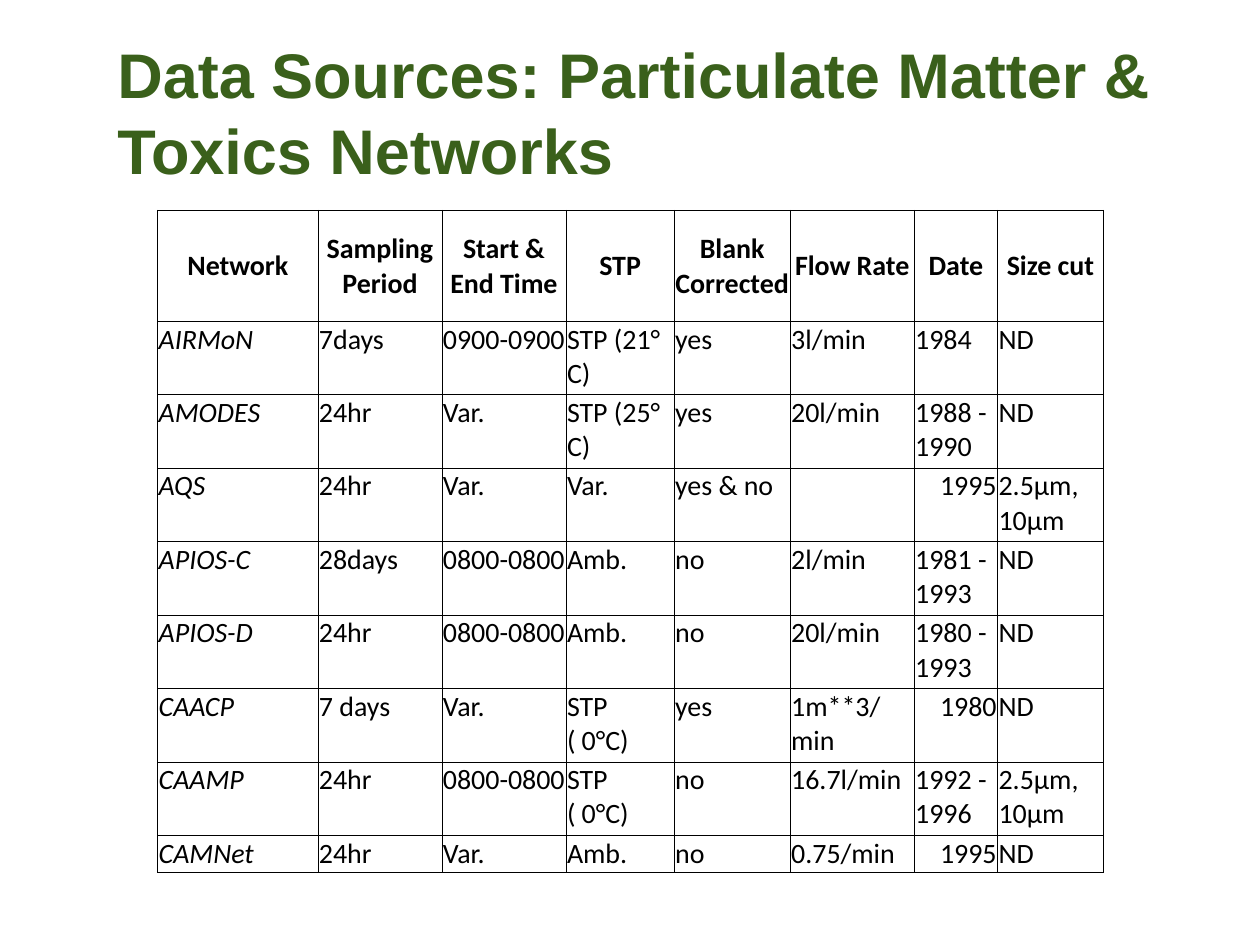
import lxml.etree
import pptx
import pptx.dml.color
import pptx.enum.text
import pptx.oxml.ns
import pptx.util

Cm = pptx.util.Cm
Pt = pptx.util.Pt
ALIGN = pptx.enum.text.PP_ALIGN
ANCHOR = pptx.enum.text.MSO_ANCHOR

GREEN = pptx.dml.color.RGBColor(0x3A, 0x60, 0x1B)
BLACK = pptx.dml.color.RGBColor(0x00, 0x00, 0x00)

COLUMN_WIDTHS = [3.23, 2.5, 2.5, 2.18, 2.34, 2.5, 1.68, 2.13]
ROW_HEIGHTS = [2.24] + [1.48] * 7 + [0.74]
CELL_INSET = Cm(0.02)

HEADINGS = ["Network", "Sampling Period", "Start & End Time", "STP",
            "Blank Corrected", "Flow Rate", "Date", "Size cut"]
# Dates given as numbers are right-aligned, dates given as text are not
NETWORKS = [
    ["AIRMoN", "7days", "0900-0900", "STP (21° C)", "yes", "3l/min", "1984", "ND"],
    ["AMODES", "24hr", "Var.", "STP (25° C)", "yes", "20l/min", "1988 - 1990", "ND"],
    ["AQS", "24hr", "Var.", "Var.", "yes & no", "", 1995, "2.5µm, 10µm"],
    ["APIOS-C", "28days", "0800-0800", "Amb.", "no", "2l/min", "1981 - 1993", "ND"],
    ["APIOS-D", "24hr", "0800-0800", "Amb.", "no", "20l/min", "1980 - 1993", "ND"],
    ["CAACP", "7 days", "Var.", "STP  ( 0°C)", "yes", "1m**3/min", 1980, "ND"],
    ["CAAMP", "24hr", "0800-0800", "STP  ( 0°C)", "no", "16.7l/min", "1992 - 1996",
     "2.5µm, 10µm"],
    ["CAMNet", "24hr", "Var.", "Amb.", "no", "0.75/min", 1995, "ND"],
]


def add_run(paragraph, text, font_name, size, color, bold=False, italic=False):
    run = paragraph.add_run()
    run.text = text
    run.font.name = font_name
    run.font.size = Pt(size)
    run.font.color.rgb = color
    run.font.bold = bold
    run.font.italic = italic


def set_borders(cell, color, width):
    properties = cell._tc.get_or_add_tcPr()
    qn = pptx.oxml.ns.qn
    for index, side in enumerate(("a:lnL", "a:lnR", "a:lnT", "a:lnB")):
        line = lxml.etree.Element(qn(side), w=str(Pt(width)))
        fill = lxml.etree.SubElement(line, qn("a:solidFill"))
        lxml.etree.SubElement(fill, qn("a:srgbClr"), val=str(color))
        properties.insert(index, line)


def place_title(slide, left, top, width, height):
    title = slide.shapes.title
    title.left, title.top, title.width, title.height = left, top, width, height
    frame = title.text_frame
    frame.word_wrap = True
    frame.vertical_anchor = ANCHOR.MIDDLE
    paragraph = frame.paragraphs[0]
    paragraph.alignment = ALIGN.LEFT
    add_run(paragraph, "Data Sources: Particulate Matter & Toxics Networks",
            "Arial", 36, GREEN, bold=True)


def fill_cell(cell, value, is_heading, is_network):
    cell.fill.background()
    cell.margin_left = cell.margin_right = cell.margin_top = CELL_INSET
    cell.margin_bottom = 0
    cell.vertical_anchor = ANCHOR.MIDDLE if is_heading else ANCHOR.TOP
    paragraph = cell.text_frame.paragraphs[0]
    if is_heading:
        paragraph.alignment = ALIGN.CENTER
    elif isinstance(value, int):
        paragraph.alignment = ALIGN.RIGHT
    if value != "":
        add_run(paragraph, str(value), "Calibri", 16, BLACK,
                bold=is_heading, italic=is_network and not is_heading)
    set_borders(cell, BLACK, 0.5)


def add_network_table(slide, left, top, width, height):
    rows = [HEADINGS] + NETWORKS
    table = slide.shapes.add_table(len(rows), len(HEADINGS),
                                   left, top, width, height).table
    table.first_row = table.horz_banding = False
    for column, column_width in zip(table.columns, COLUMN_WIDTHS):
        column.width = Cm(column_width)
    for row, row_height in zip(table.rows, ROW_HEIGHTS):
        row.height = Cm(row_height)
    for row_index, values in enumerate(rows):
        for column_index, value in enumerate(values):
            fill_cell(table.cell(row_index, column_index), value,
                      row_index == 0, column_index == 0)


def main():
    presentation = pptx.Presentation()
    presentation.slide_width = Cm(25.4)
    presentation.slide_height = Cm(19.05)
    title_only = presentation.slide_layouts[5]
    slide = presentation.slides.add_slide(title_only)

    # Title
    place_title(slide, Cm(2.11), Cm(0.76), Cm(22.66), Cm(2.97))
    # Table of monitoring networks
    add_network_table(slide, Cm(3.18), Cm(4.24), Cm(19.05), Cm(13.34))

    presentation.save("out.pptx")


if __name__ == "__main__":
    main()
